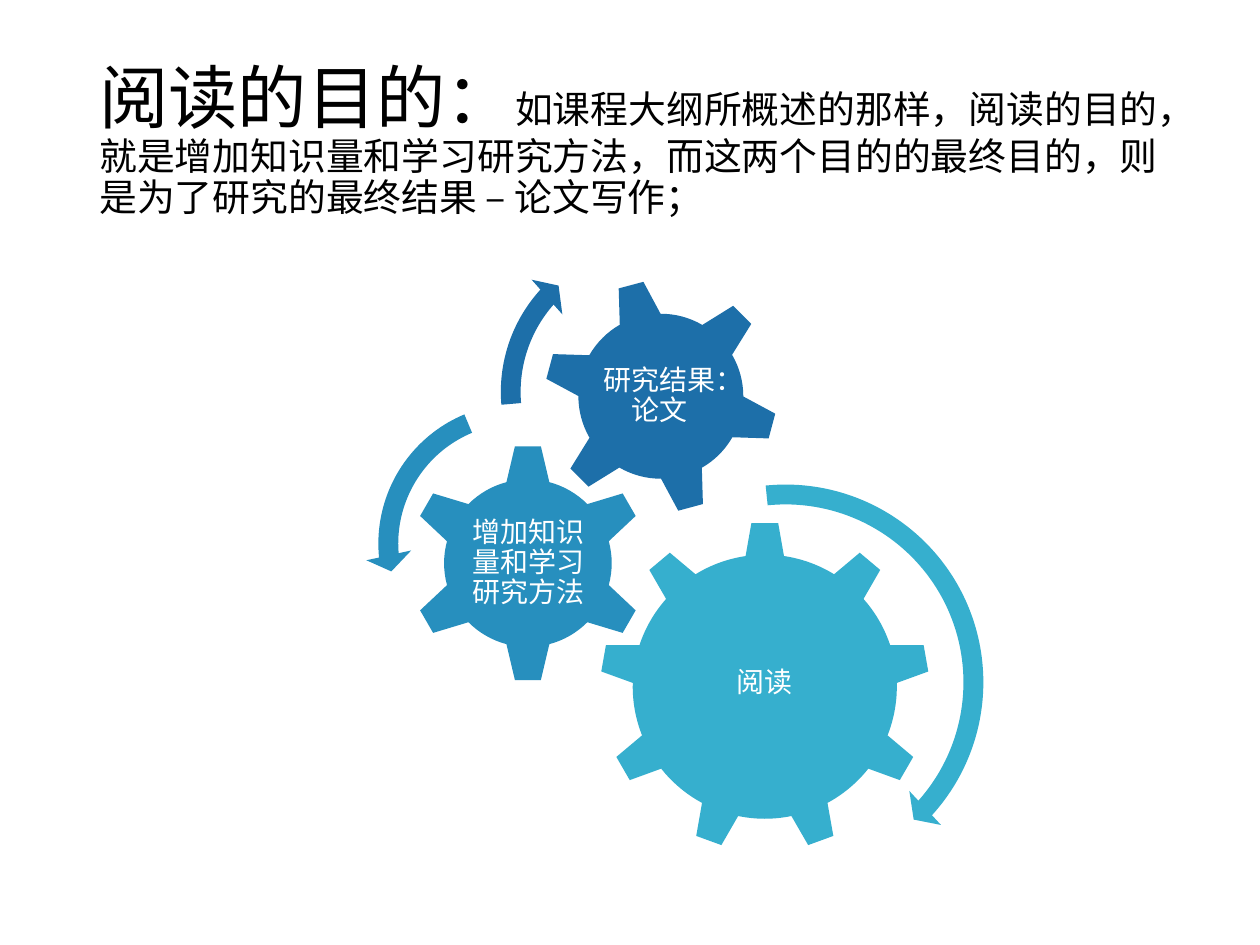
import pptx
import pptx.util
import pptx.dml.color
import pptx.enum.shapes
import pptx.enum.text

Inches = pptx.util.Inches
Pt = pptx.util.Pt
RGBColor = pptx.dml.color.RGBColor
MSO_SHAPE = pptx.enum.shapes.MSO_SHAPE
MSO_ANCHOR = pptx.enum.text.MSO_ANCHOR
PP_ALIGN = pptx.enum.text.PP_ALIGN

BLACK = RGBColor(0x00, 0x00, 0x00)
WHITE = RGBColor(0xFF, 0xFF, 0xFF)
TEAL = RGBColor(0x36, 0xAF, 0xCE)
BLUE = RGBColor(0x27, 0x8F, 0xBE)
NAVY = RGBColor(0x1D, 0x6F, 0xA9)
FONT = "Times New Roman"

TITLE_RUNS = [
    ("阅读的目的：", 39.6),
    ("如课程大纲所概述的那样，阅读的目的，就是增加知识量和学习研究方法，"
     "而这两个目的的最终目的，则是为了研究的最终结果 – 论文写作；", 21.6),
]

GEARS = [
    (MSO_SHAPE.GEAR_9, (1.86, 2.34, 2.62), 0, TEAL, "阅读", (2.39, 2.95, 1.56, 1.35)),
    (MSO_SHAPE.GEAR_6, (0.34, 1.72, 1.9), 0, BLUE, "增加知识量和学习研究方法", (0.82, 2.2, 0.95, 0.94)),
    (MSO_SHAPE.GEAR_6, (1.41, 0.41, 1.87), 345, NAVY, "研究结果：论文", (1.81, 0.82, 1.05, 1.05)),
]

ARROWS = [
    (MSO_SHAPE.CIRCULAR_ARROW, (1.66, 1.94, 3.35), TEAL, (0.047, 2.99, 25.198, 158.534, 0.055)),
    (MSO_SHAPE.LEFT_CIRCULAR_ARROW, (0, 1.3, 2.43), BLUE, (0.065, 4.3, 104.891, 148.378, 0.075)),
    (MSO_SHAPE.CIRCULAR_ARROW, (0.97, 0, 2.62), NAVY, (0.06, 3.941, 133.138, 105.082, 0.07)),
]


def add_text(shapes, left, top, width, height, runs, color):
    s = shapes.add_textbox(Inches(left), Inches(top), Inches(width), Inches(height))
    tf = s.text_frame
    tf.word_wrap = True
    tf.vertical_anchor = MSO_ANCHOR.MIDDLE
    p = tf.paragraphs[0]
    p.line_spacing = 0.9
    p.font.name = FONT
    p.font.color.rgb = color
    for text, size in runs:
        r = p.add_run()
        r.text = text
        r.font.size = Pt(size)
    return tf


def add_solid(shapes, kind, left, top, size, color):
    s = shapes.add_shape(kind, Inches(left), Inches(top), Inches(size), Inches(size))
    s.shadow.inherit = False
    s.fill.solid()
    s.fill.fore_color.rgb = color
    s.line.fill.background()
    return s


def add_label(shapes, left, top, width, height, text):
    tf = add_text(shapes, left, top, width, height, [(text, 16)], WHITE)
    tf.margin_left = tf.margin_right = tf.margin_top = tf.margin_bottom = Inches(0.02)
    tf.paragraphs[0].alignment = PP_ALIGN.CENTER


def add_gears(slide, left, top):
    shapes = slide.shapes.add_group_shape().shapes
    for kind, (x, y, size), rotation, color, text, (tx, ty, width, height) in GEARS:
        gear = add_solid(shapes, kind, left + x, top + y, size, color)
        gear.rotation = rotation
        add_label(shapes, left + tx, top + ty, width, height, text)
    for kind, (x, y, size), color, values in ARROWS:
        arrow = add_solid(shapes, kind, left + x, top + y, size, color)
        for i, value in enumerate(values):
            arrow.adjustments[i] = value


def main():
    prs = pptx.Presentation()
    prs.slide_width = Inches(10)
    prs.slide_height = Inches(7.5)
    slide = prs.slides.add_slide(prs.slide_layouts[6])
    add_text(slide.shapes, 0.69, 0.4, 8.62, 1.45, TITLE_RUNS, BLACK)
    add_gears(slide, 2.9, 1.8)
    prs.save("out.pptx")


if __name__ == "__main__":
    main()
